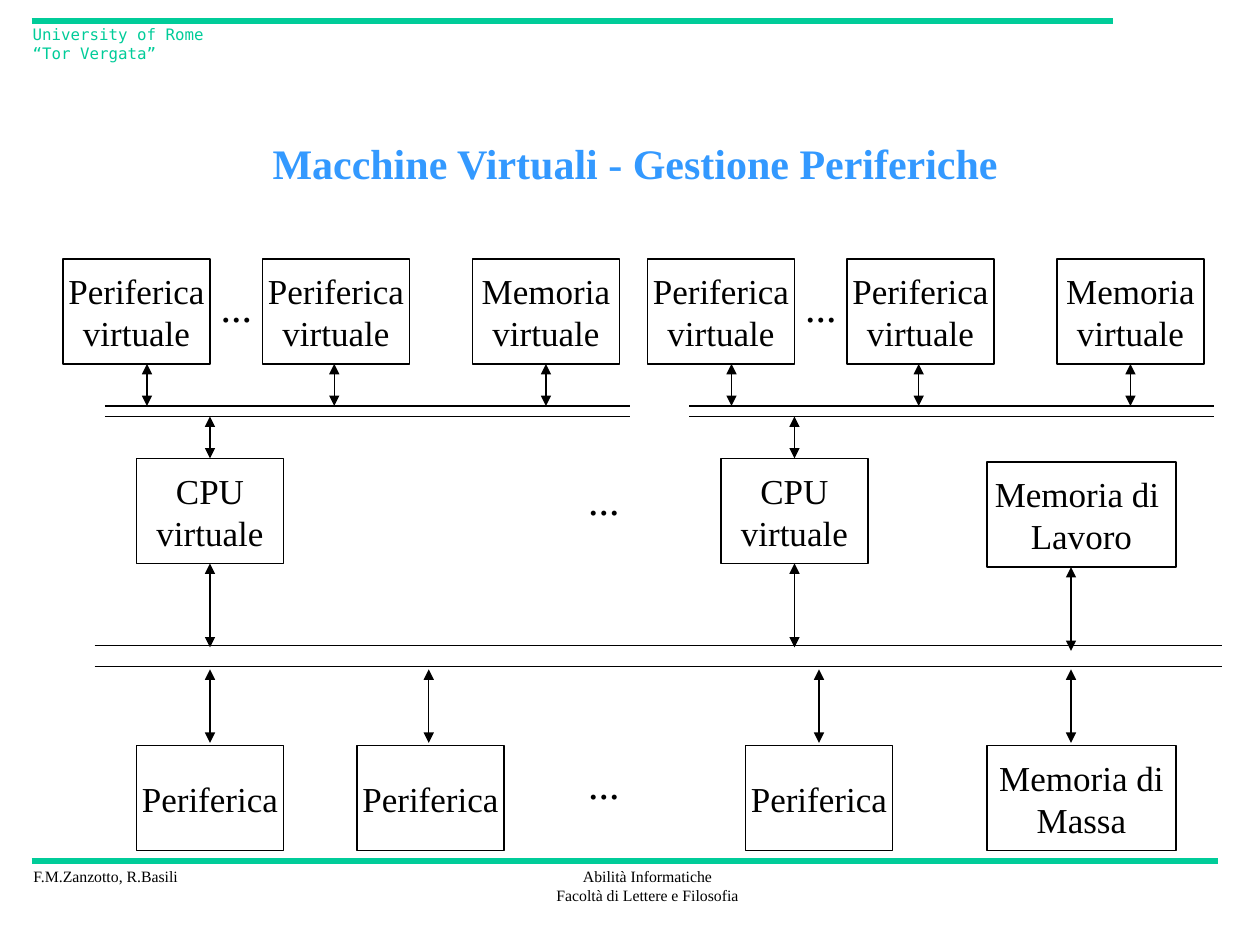
"""Build the slide on peripheral management with virtual machines."""
from lxml.etree import SubElement
from pptx import Presentation
from pptx.dml.color import RGBColor
from pptx.enum.shapes import MSO_CONNECTOR, MSO_SHAPE
from pptx.enum.text import MSO_ANCHOR as Anchor, PP_ALIGN as Align
from pptx.oxml.ns import qn
from pptx.util import Pt

GREEN = RGBColor(0x00, 0xCC, 0x99)
BLUE = RGBColor(0x33, 0x99, 0xFF)
BLACK = RGBColor(0x00, 0x00, 0x00)
SERIF = "Times New Roman"
MONO = "DejaVu Sans Mono"

deck = Presentation()
deck.slide_width, deck.slide_height = Pt(720), Pt(540)
page = deck.slides.add_slide(deck.slide_layouts[5])


def write_text(shape, text, size, color=BLACK, font=SERIF, align=Align.CENTER,
               anchor=Anchor.MIDDLE, wrap=False, bold=False):
    frame = shape.text_frame
    frame.text = text
    frame.word_wrap = wrap
    frame.vertical_anchor = anchor
    for para in frame.paragraphs:
        para.alignment = align
        for span in para.runs:
            span.font.name, span.font.size = font, Pt(size)
            span.font.bold, span.font.color.rgb = bold, color


def draw_line(x1, y1, x2, y2, color=BLACK, width=0.75, arrows=False):
    line = page.shapes.add_connector(
        MSO_CONNECTOR.STRAIGHT, Pt(x1), Pt(y1), Pt(x2), Pt(y2))
    line.line.color.rgb = color
    line.line.width = Pt(width)
    if arrows:
        for end in ("a:headEnd", "a:tailEnd"):
            SubElement(line.line._get_or_add_ln(), qn(end), type="triangle")
    SubElement(line._element.spPr, qn("a:effectLst"))


draw_line(18, 492, 696, 492, GREEN, 3)
draw_line(18, 12, 636, 12, GREEN, 3)

title = page.shapes.title
title.left, title.top, title.width, title.height = Pt(39), Pt(48), Pt(648), Pt(90)
write_text(title, "Macchine Virtuali - Gestione Periferiche", 24, BLUE,
           wrap=True, bold=True)

boxes = [
    (78, 426, 84, "Periferica"),
    (204, 426, 84, "Periferica"),
    (426, 426, 84, "Periferica"),
    (564, 264, 108, "Memoria di \nLavoro"),
    (564, 426, 108, "Memoria di\nMassa"),
]
dots = [(329, 429.5), (329, 267)]
buses = [(54, 698.5, 369), (54, 698.5, 381)]
arrows = [(612, 324, 372)] + [(x, 382.5, 424.5) for x in (120, 245, 468, 612)]

for left in (36, 370):
    boxes += [
        (left, 148, 84, "Periferica\nvirtuale"),
        (left + 114, 148, 84, "Periferica\nvirtuale"),
        (left + 234, 148, 84, "Memoria\nvirtuale"),
        (left + 42, 262, 84, "CPU\nvirtuale"),
    ]
    dots.append((left + 83, 157))
    buses += [(left + 24, left + 324, y) for y in (232, 238)]
    arrows += [(left + x, 208, 232) for x in (48, 155, 276)]
    arrows += [(left + 84, 238, 262), (left + 84, 322, 370)]

for left, top, width, text in boxes:
    box = page.shapes.add_shape(
        MSO_SHAPE.RECTANGLE, Pt(left), Pt(top), Pt(width), Pt(60))
    box.shadow.inherit = False
    box.fill.background()
    box.line.color.rgb = BLACK
    box.line.width = Pt(0.75)
    write_text(box, text, 20)

for x1, x2, y in buses:
    draw_line(x1, y, x2, y)
for x, y1, y2 in arrows:
    draw_line(x, y1, x, y2, arrows=True)

labels = [(left, top, 36, 36, "...", 24, BLACK, SERIF, Align.LEFT, False)
          for left, top in dots]
labels += [
    (12, 492, 98, 18, "F.M.Zanzotto, R.Basili", 9, BLACK, SERIF, Align.LEFT, False),
    (310.5, 492, 119, 29, "Abilità Informatiche\nFacoltà di Lettere e Filosofia",
     9, BLACK, SERIF, Align.CENTER, False),
    (11.5, 10.5, 123, 29, "University of Rome “Tor Vergata”",
     9, GREEN, MONO, Align.LEFT, True),
]
for left, top, width, height, text, size, color, font, align, wrap in labels:
    label = page.shapes.add_textbox(Pt(left), Pt(top), Pt(width), Pt(height))
    write_text(label, text, size, color, font, align, Anchor.TOP, wrap)

deck.save("out.pptx")
